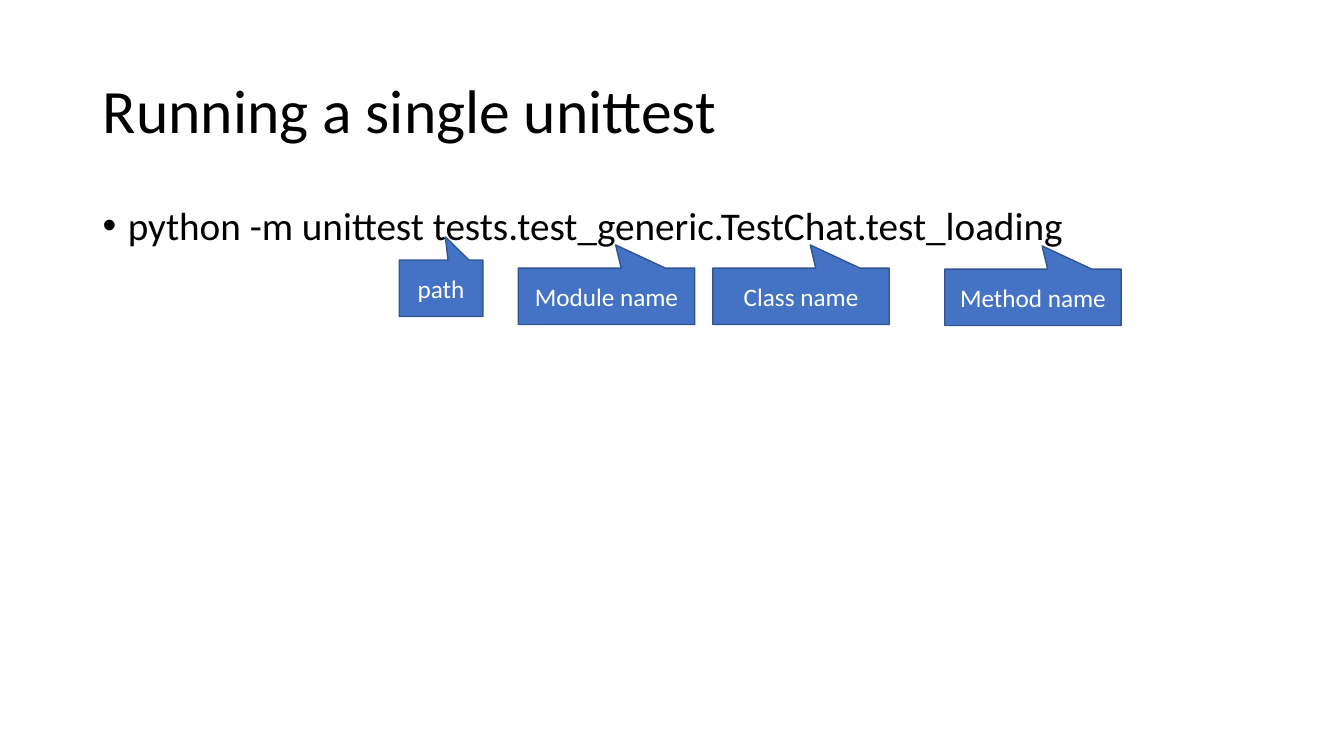
from dataclasses import dataclass

from lxml.etree import SubElement
from pptx import Presentation
from pptx.dml.color import RGBColor
from pptx.enum.shapes import MSO_SHAPE as Shape
from pptx.enum.text import MSO_ANCHOR as Anchor, PP_ALIGN as Align
from pptx.oxml.ns import qn
from pptx.util import Inches, Pt

TITLE = "Running a single unittest"
COMMAND = "python -m unittest tests.test_generic.TestChat.test_loading"
CALLOUTS = [
    ("path", 3.96, 2.58, 0.83),
    ("Module name", 5.14, 2.66, 1.75),
    ("Class name", 7.07, 2.66, 1.75),
    ("Method name", 9.37, 2.67, 1.75),
]
CALLOUT_HEIGHT = 0.56
POINTER = (0.052, -0.91)
WIDTH, HEIGHT = 13.33, 7.5
MARGIN = 0.92
CONTENT_WIDTH = 11.5


@dataclass(frozen=True)
class Theme:
    font: str = "Calibri"
    ink: RGBColor = RGBColor.from_string("000000")
    paper: RGBColor = RGBColor.from_string("FFFFFF")
    fill: RGBColor = RGBColor.from_string("4472C4")
    edge: RGBColor = RGBColor.from_string("325491")
    title: int = 44
    body: int = 28
    label: int = 18


THEME = Theme()


def write(shape, text, size, color, anchor, **formats):
    frame = shape.text_frame
    frame.word_wrap = True
    frame.vertical_anchor = anchor
    para = frame.paragraphs[0]
    for name, value in formats.items():
        setattr(para, name, value)
    span = para.add_run()
    span.text = text
    for name, value in {"name": THEME.font, "size": Pt(size)}.items():
        setattr(span.font, name, value)
    span.font.color.rgb = color
    return para


def add_text(page, top, height, *content, **formats):
    area = map(Inches, (MARGIN, top, CONTENT_WIDTH, height))
    return write(page.shapes.add_textbox(*area), *content, line_spacing=0.9, **formats)


def add_bullet(para):
    settings = para._p.get_or_add_pPr()
    for name, value in {"marL": Inches(0.25), "indent": -Inches(0.25)}.items():
        settings.set(name, str(int(value)))
    SubElement(settings, qn("a:buFont"), typeface="Arial")
    SubElement(settings, qn("a:buChar"), char="•")


def add_callout(page, label, left, top, width):
    area = map(Inches, (left, top, width, CALLOUT_HEIGHT))
    callout = page.shapes.add_shape(Shape.RECTANGULAR_CALLOUT, *area)
    callout.shadow.inherit = False
    for index, value in enumerate(POINTER):
        callout.adjustments[index] = value
    callout.fill.solid()
    callout.fill.fore_color.rgb = THEME.fill
    callout.line.color.rgb = THEME.edge
    callout.line.width = Pt(1)
    write(callout, label, THEME.label, THEME.paper, Anchor.MIDDLE, alignment=Align.CENTER)


def main():
    deck = Presentation()
    deck.slide_width, deck.slide_height = Inches(WIDTH), Inches(HEIGHT)
    page = deck.slides.add_slide(deck.slide_layouts[6])
    add_text(page, 0.4, 1.45, TITLE, THEME.title, THEME.ink, Anchor.MIDDLE)
    command = add_text(page, 2, 4.76, COMMAND, THEME.body, THEME.ink, Anchor.TOP,
                       space_before=Pt(10))
    add_bullet(command)
    for callout in CALLOUTS:
        add_callout(page, *callout)
    deck.save("out.pptx")


if __name__ == "__main__":
    main()
